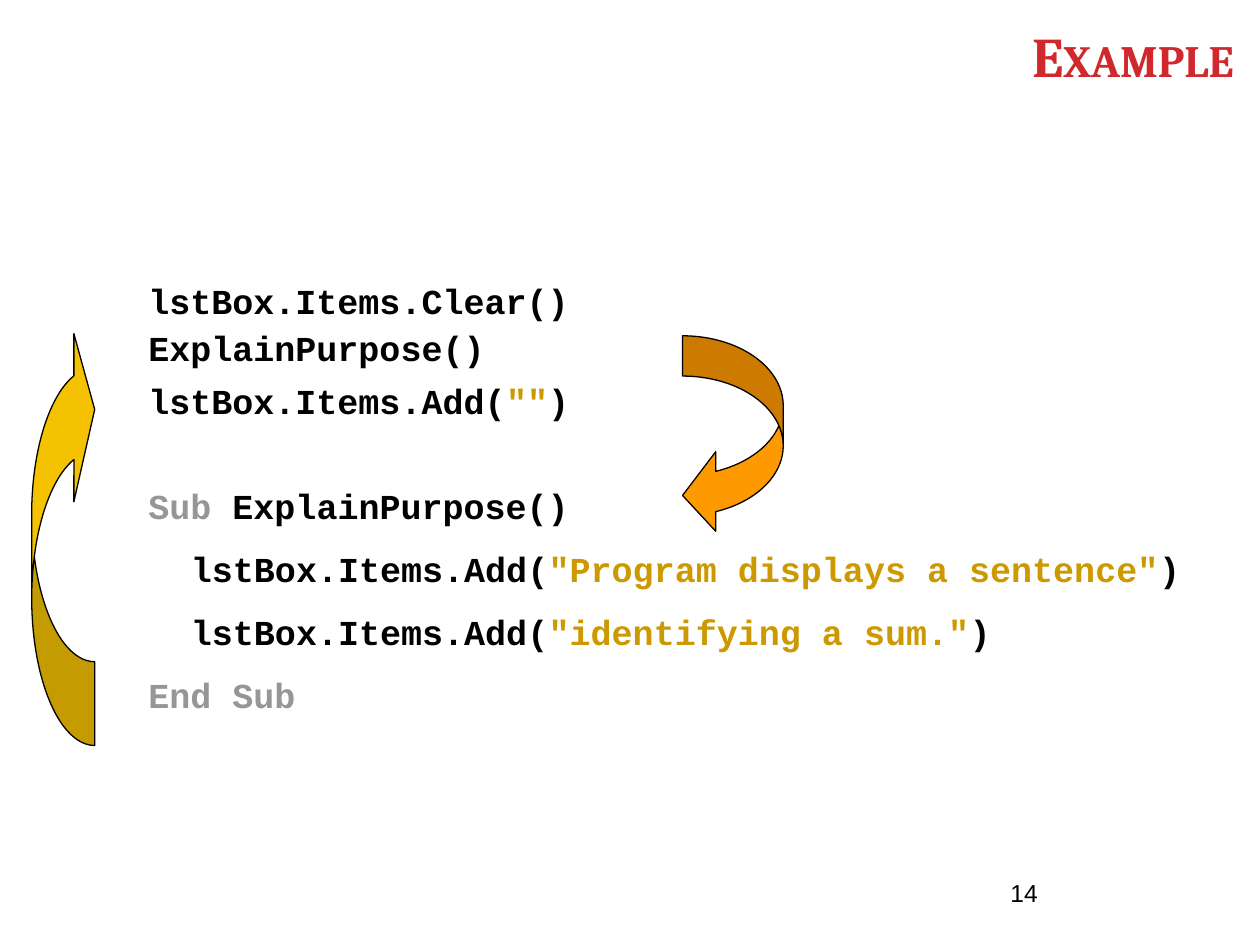
from dataclasses import dataclass

from pptx import Presentation
from pptx.dml.color import RGBColor
from pptx.enum.shapes import MSO_SHAPE
from pptx.enum.text import MSO_ANCHOR, PP_ALIGN
from pptx.util import Cm, Pt

LEFT_ARROW = MSO_SHAPE.CURVED_LEFT_ARROW
RIGHT_ARROW = MSO_SHAPE.CURVED_RIGHT_ARROW
BOTTOM = MSO_ANCHOR.BOTTOM
TOP = MSO_ANCHOR.TOP
ALIGN_LEFT = PP_ALIGN.LEFT
ALIGN_RIGHT = PP_ALIGN.RIGHT

COLORS = {
    "title": "D1282E",
    "code": "000000",
    "keyword": "969696",
    "string": "CC9900",
    "call": "FF9900",
    "return": "F5C201",
    "outline": "000000",
}

MARGIN = 2.74
INDENTED = 3.6
SUB_TOP = 9.74
SUB_PITCH = 1.27


@dataclass(frozen=True)
class Span:
    text: str
    color: str = "code"


@dataclass(frozen=True)
class CodeLine:
    left: float
    top: float
    width: float
    spans: tuple[Span, ...]
    spacing: float = 0.9


@dataclass(frozen=True)
class CurvedArrow:
    preset: MSO_SHAPE
    left: float
    top: float
    width: float
    height: float
    adjustments: tuple[float, ...]
    color: str
    flipped: bool = False


def add_item(text: str) -> tuple[Span, ...]:
    """Split a list box Add call into code and string spans."""
    return Span("lstBox.Items.Add("), Span(text, "string"), Span(")")


CODE_LINES = (
    CodeLine(MARGIN, 5.51, 22.12, (Span("lstBox.Items.Clear()"),), 1.0),
    CodeLine(MARGIN, 6.56, 21.59, (Span("ExplainPurpose()"),)),
    CodeLine(MARGIN, 7.62, 21.38, add_item('""')),
    CodeLine(MARGIN, SUB_TOP, 20.53,
             (Span("Sub", "keyword"), Span(" ExplainPurpose()"))),
    CodeLine(INDENTED, SUB_TOP + SUB_PITCH, 20.75,
             add_item('"Program displays a sentence"')),
    CodeLine(INDENTED, SUB_TOP + 2 * SUB_PITCH, 18.63,
             add_item('"identifying a sum."')),
    CodeLine(MARGIN, SUB_TOP + 3 * SUB_PITCH, 14.6,
             (Span("End Sub", "keyword"),)),
)

ARROWS = (
    CurvedArrow(LEFT_ARROW, 13.76, 6.77, 2.03, 4.02, (0.4, 0.79, 0.33), "call"),
    CurvedArrow(RIGHT_ARROW, 0.64, 6.56, 1.27, 8.47, (1.33, 2.67, 0.33),
                "return", flipped=True),
)


def rgb(name: str) -> RGBColor:
    return RGBColor.from_string(COLORS[name])


def add_text(page, left: float, top: float, width: float, height: float,
             spans: tuple[Span, ...], font: str, size: int, bold: bool = True,
             align: PP_ALIGN = ALIGN_LEFT, anchor: MSO_ANCHOR = TOP,
             spacing: float = 1.0, small_caps: bool = False) -> None:
    box = page.shapes.add_textbox(Cm(left), Cm(top), Cm(width), Cm(height))
    frame = box.text_frame
    frame.word_wrap = True
    frame.vertical_anchor = anchor
    para = frame.paragraphs[0]
    para.alignment = align
    para.line_spacing = spacing
    for span in spans:
        run = para.add_run()
        run.text = span.text
        run.font.name = font
        run.font.size = Pt(size)
        run.font.bold = bold
        run.font.color.rgb = rgb(span.color)
        if small_caps:
            run._r.get_or_add_rPr().set("cap", "small")


def add_code_line(page, line: CodeLine) -> None:
    add_text(page, line.left, line.top, line.width, 1.02, line.spans,
             "Courier New", 20, spacing=line.spacing)


def add_arrow(page, arrow: CurvedArrow) -> None:
    shape = page.shapes.add_shape(arrow.preset, Cm(arrow.left), Cm(arrow.top),
                                  Cm(arrow.width), Cm(arrow.height))
    for index, value in enumerate(arrow.adjustments):
        shape.adjustments[index] = value
    shape.shadow.inherit = False
    shape.fill.solid()
    shape.fill.fore_color.rgb = rgb(arrow.color)
    shape.line.color.rgb = rgb("outline")
    shape.line.width = Pt(0.75)
    if arrow.flipped:
        shape._element.spPr.xfrm.set("flipV", "1")


def main() -> None:
    deck = Presentation()
    deck.slide_width = Cm(25.4)
    deck.slide_height = Cm(19.05)
    page = deck.slides.add_slide(deck.slide_layouts[6])

    add_text(page, 0.43, 0.36, 24.69, 1.55, (Span("Example", "title"),),
             "Cambria", 32, align=ALIGN_RIGHT, anchor=BOTTOM, small_caps=True)
    for arrow in ARROWS:
        add_arrow(page, arrow)
    for line in CODE_LINES:
        add_code_line(page, line)
    add_text(page, 20.12, 17.58, 5.28, 1.27, (Span("14"),), "Arial", 14,
             bold=False)

    deck.save("out.pptx")


if __name__ == "__main__":
    main()
